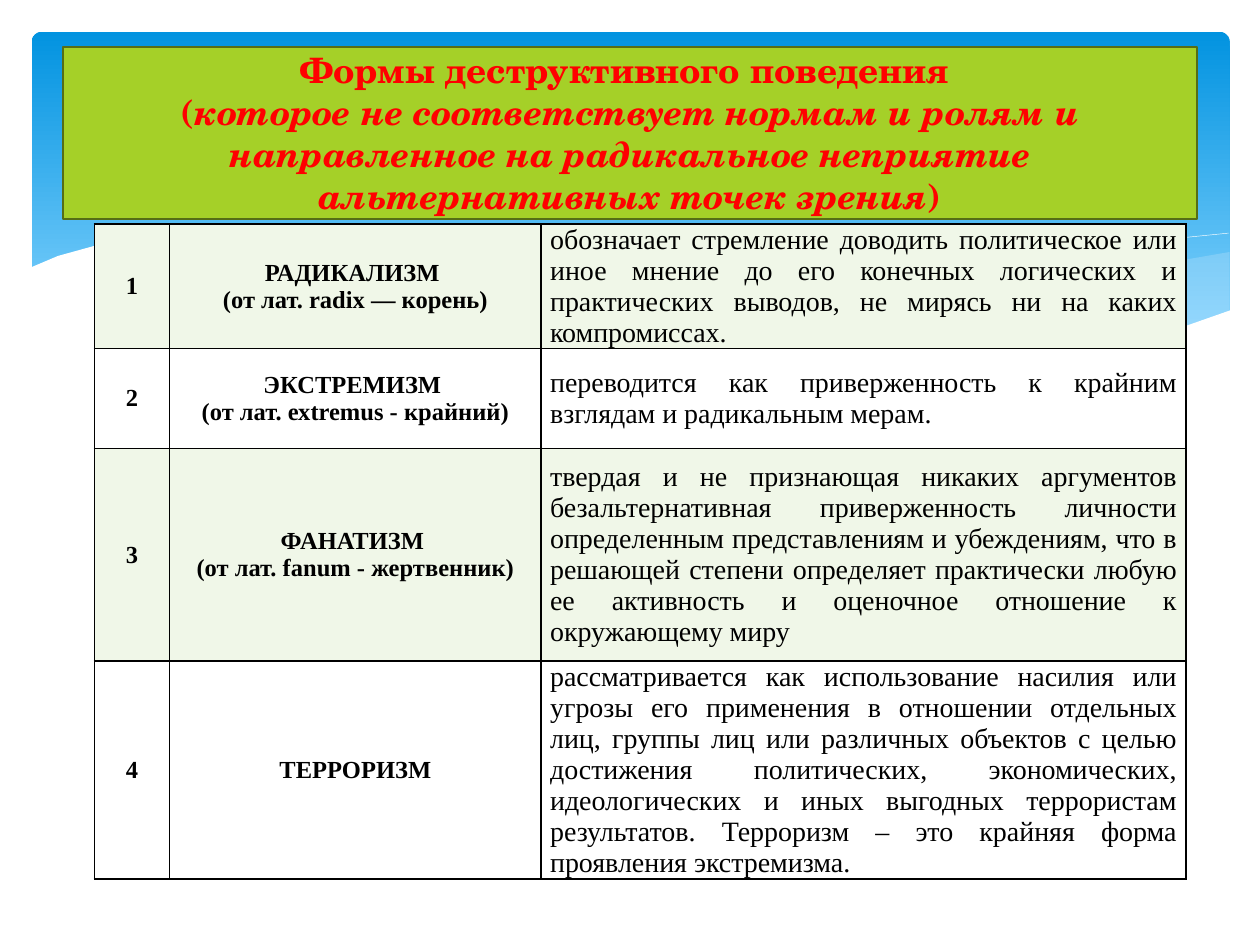
from lxml.etree import SubElement
from pptx import Presentation
from pptx.dml.color import RGBColor
from pptx.enum.shapes import MSO_SHAPE
from pptx.enum.text import MSO_ANCHOR, MSO_AUTO_SIZE, PP_ALIGN
from pptx.oxml.ns import qn
from pptx.util import Cm, Pt

SKY = RGBColor(0x02, 0x93, 0xE0)
PALE = RGBColor(0x83, 0xD3, 0xFE)
MIST = RGBColor(0xC6, 0xE7, 0xFC)
WHITE = RGBColor(0xFF, 0xFF, 0xFF)
BLACK = RGBColor(0, 0, 0)
MINT = RGBColor(0xF0, 0xF7, 0xE8)
LIME = RGBColor(0xA5, 0xD0, 0x28)
OLIVE = RGBColor(0x56, 0x6D, 0x15)
RED = RGBColor(0xFF, 0, 0)

# Wave outlines, in centimetres
RIGHT = [(24.79, 5.08), (23.75, 5.26), (22.63, 5.49), (21.13, 5.84), (19.13, 6.3),
         (16.79, 6.73), (17.91, 6.88), (19.23, 7.01), (20.4, 7.06), (21.69, 7.01),
         (22.78, 6.86), (23.75, 6.65), (24.79, 6.27)]
MIDDLE = [(22.68, 6.93), (21.26, 6.73), (19.69, 6.45), (17.93, 6.1), (15.98, 5.64),
          (14.45, 5.28), (13.06, 5.03), (11.81, 4.85), (10.67, 4.75), (9.65, 4.7),
          (8.33, 4.75), (7.26, 4.85), (8.69, 5.05), (10.26, 5.36), (12.47, 5.89),
          (14.38, 6.3), (16.1, 6.63), (17.65, 6.86), (19, 7.01), (20.5, 7.06),
          (21.77, 7.04)]
FALL = [(7.85, 4.95), (9.22, 4.8), (10.57, 4.75), (12.42, 4.83), (14.12, 5),
        (16.15, 5.28), (18.47, 5.74), (20.19, 6.12), (22.07, 6.63), (23.04, 6.91)]
RISE = [(15.57, 6.53), (17.07, 6.12), (19, 5.66), (20.47, 5.33), (22, 5.05),
        (23.47, 4.83), (24.77, 4.7)]
FRONT = [(24.82, 6.25), (23.88, 6.58), (22.83, 6.83), (21.59, 6.99), (20.55, 7.04),
         (19.33, 6.99), (17.98, 6.86), (16.46, 6.65), (14.71, 6.35), (12.78, 5.92),
         (11.35, 5.59), (9.93, 5.26), (8.64, 5), (7.42, 4.83), (6.35, 4.72),
         (4.9, 4.67), (3.71, 4.7), (2.69, 4.8), (1.93, 4.95), (1.17, 5.16),
         (0.58, 5.41), (0.58, 8.36), (24.82, 8.36)]

COLS = [1.52, 7.49, 13]
ROWS = [2.51, 2.01, 4.29, 4.39]
FORMS = [
    (["РАДИКАЛИЗМ ", "(от лат. radix — корень)"],
     "обозначает стремление доводить политическое или иное мнение до его конечных "
     "логических и практических выводов, не мирясь ни на каких компромиссах."),
    (["ЭКСТРЕМИЗМ ", "(от лат. ехtremus - крайний)"],
     "переводится как приверженность к крайним взглядам и радикальным мерам."),
    (["ФАНАТИЗМ ", "(от лат. fanum - жертвенник)"],
     "твердая и не признающая никаких аргументов безальтернативная приверженность "
     "личности определенным представлениям и убеждениям, что в решающей степени "
     "определяет практически любую ее активность и оценочное отношение к "
     "окружающему миру"),
    (["ТЕРРОРИЗМ"],
     "рассматривается как использование насилия или угрозы его применения в отношении "
     "отдельных лиц, группы лиц или различных объектов с целью достижения "
     "политических, экономических, идеологических и иных выгодных террористам "
     "результатов. Терроризм – это крайняя форма проявления экстремизма."),
]


class Deck:
    def __init__(self):
        self.prs = Presentation()
        self.prs.slide_width, self.prs.slide_height = Cm(25.4), Cm(19.05)
        self.slide = self.prs.slides.add_slide(self.prs.slide_layouts[5])
        self.head, self.body = "TeX Gyre Schola", "Times New Roman"

    def run(self, para, text, name, size, color, bold=True, slant=False):
        run = para.add_run()
        run.text = text
        font = run.font
        font.name, font.size, font.bold, font.italic = name, Pt(size), bold, slant
        font.color.rgb = color

    def panel(self, left, top, width, height):
        shape = self.slide.shapes.add_shape(
            MSO_SHAPE.ROUNDED_RECTANGLE, Cm(left), Cm(top), Cm(width), Cm(height))
        shape.adjustments[0] = 0.03
        shape.shadow.inherit = False
        shape.line.fill.background()
        shape.fill.gradient()
        shape.fill.gradient_angle = 270
        for stop, place, color in zip(shape.fill.gradient_stops, (0, 0.9), (SKY, PALE)):
            stop.position, stop.color.rgb = place, color

    def wave(self, points, fill=None, alpha=100):
        """A filled wave, or a thin white curve when no fill is given."""
        dots = [(Cm(x), Cm(y)) for x, y in points]
        path = self.slide.shapes.build_freeform(*dots[0])
        path.add_line_segments(dots[1:], close=fill is not None)
        shape = path.convert_to_shape()
        shape.shadow.inherit = False
        if fill is None:
            shape.fill.background()
            shape.line.color.rgb, shape.line.width = WHITE, Pt(0.25)
            return
        shape.line.fill.background()
        shape.fill.solid()
        shape.fill.fore_color.rgb = fill
        if alpha < 100:
            tint = next(shape.element.spPr.iter(qn("a:srgbClr")))
            SubElement(tint, qn("a:alpha"), val=str(alpha * 1000))

    def title(self, left, top, width, height, lines):
        shape = self.slide.shapes.title
        shape.left, shape.top, shape.width, shape.height = map(Cm, (left, top, width, height))
        shape.fill.solid()
        shape.fill.fore_color.rgb = LIME
        shape.line.color.rgb, shape.line.width = OLIVE, Pt(1.25)
        frame = shape.text_frame
        frame.word_wrap, frame.auto_size = True, MSO_AUTO_SIZE.NONE
        frame.vertical_anchor = MSO_ANCHOR.MIDDLE
        para = frame.paragraphs[0]
        para.alignment = PP_ALIGN.CENTER
        for num, line in enumerate(lines):
            if num:
                para.add_line_break()
            for text, slant in line:
                self.run(para, text, self.head, 20, RED, slant=slant)
        # Bring the title in front of the waves
        shape.element.getparent().append(shape.element)

    def cell(self, cell, lines, fill, align, size, bold):
        cell.margin_left = cell.margin_right = Cm(0.18)
        cell.margin_top = cell.margin_bottom = 0
        cell.vertical_anchor = MSO_ANCHOR.MIDDLE
        props = cell._tc.get_or_add_tcPr()
        for side in "LRTB":
            edge = SubElement(props, qn(f"a:ln{side}"), w=str(Pt(1)))
            paint = SubElement(edge, qn("a:solidFill"))
            SubElement(paint, qn("a:srgbClr"), val=str(BLACK))
        cell.fill.solid()
        cell.fill.fore_color.rgb = fill
        frame = cell.text_frame
        for num, line in enumerate(lines):
            para = frame.add_paragraph() if num else frame.paragraphs[0]
            para.alignment = align
            self.run(para, line, self.body, size, BLACK, bold)

    def table(self, left, top, forms):
        table = self.slide.shapes.add_table(
            len(ROWS), len(COLS), Cm(left), Cm(top), Cm(sum(COLS)), Cm(sum(ROWS))).table
        for col, width in zip(table.columns, COLS):
            col.width = Cm(width)
        for num, (term, sense) in enumerate(forms):
            table.rows[num].height = Cm(ROWS[num])
            fill = WHITE if num % 2 else MINT
            for col, lines in enumerate(([str(num + 1)], term)):
                self.cell(table.cell(num, col), lines, fill, PP_ALIGN.CENTER, 14, True)
            self.cell(table.cell(num, 2), [sense], fill, PP_ALIGN.JUSTIFY, 16, False)


def main():
    deck = Deck()
    # Background
    deck.panel(0.64, 0.64, 24.15, 6.86)
    deck.wave(RIGHT, MIST, 29)
    deck.wave(MIDDLE, MIST, 40)
    deck.wave(FALL)
    deck.wave(RISE)
    deck.wave(FRONT, WHITE)
    # Table of forms
    deck.table(1.9, 4.52, FORMS)
    # Heading
    deck.title(1.27, 0.94, 22.86, 3.48, [
        [("Формы деструктивного поведения ", False)],
        [("(", False),
         ("которое не соответствует нормам и ролям и направленное на радикальное "
          "неприятие альтернативных точек зрения", True),
         (")", False)],
    ])
    deck.prs.save("out.pptx")


if __name__ == "__main__":
    main()
